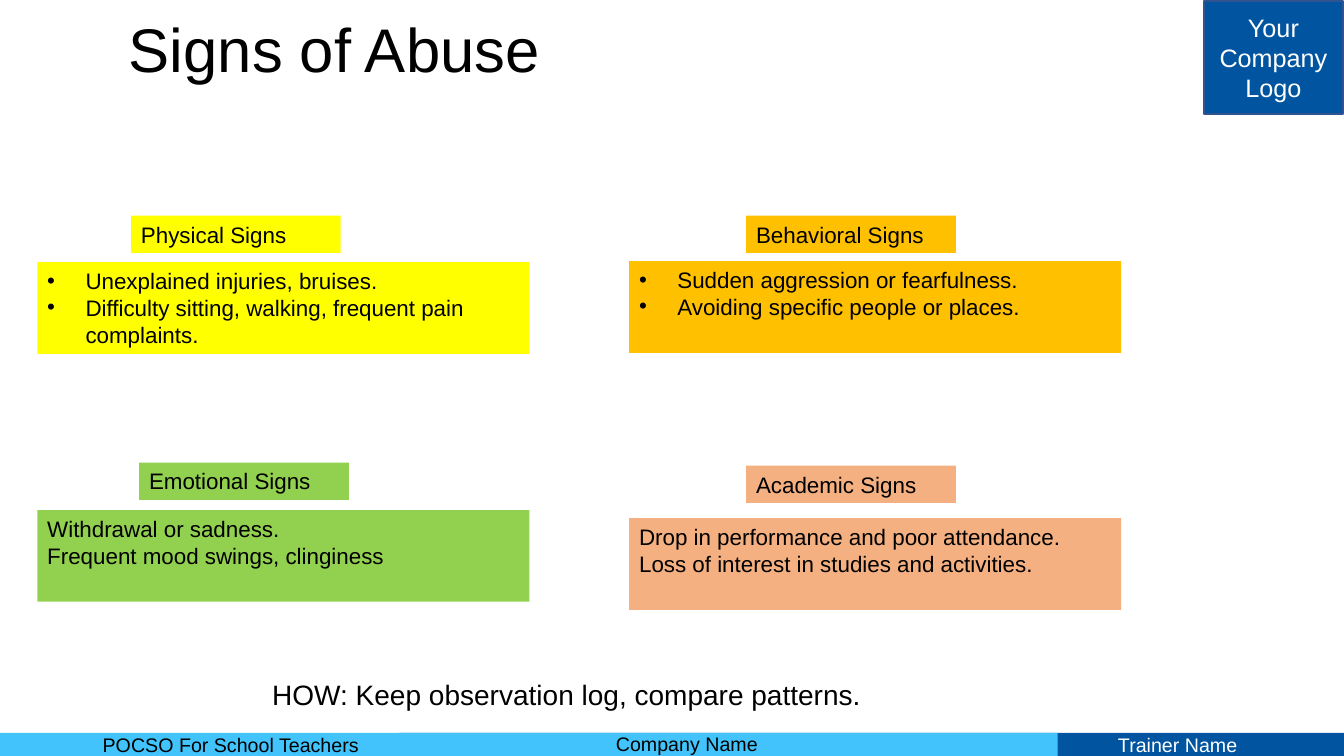
from lxml import etree
from pptx import Presentation
from pptx.dml.color import RGBColor
from pptx.enum.shapes import MSO_SHAPE
from pptx.enum.text import MSO_ANCHOR, PP_ALIGN
from pptx.oxml.ns import qn
from pptx.util import Inches, Pt

BLACK = RGBColor(0x00, 0x00, 0x00)
WHITE = RGBColor(0xFF, 0xFF, 0xFF)
NAVY = RGBColor(0x01, 0x54, 0x9F)
NAVY_EDGE = RGBColor(0x31, 0x53, 0x8F)
SKY = RGBColor(0x42, 0xC3, 0xFB)
YELLOW = RGBColor(0xFF, 0xFF, 0x00)
AMBER = RGBColor(0xFF, 0xC0, 0x00)
GREEN = RGBColor(0x92, 0xD0, 0x50)
PEACH = RGBColor(0xF4, 0xB0, 0x81)

FONT = "Arial"
BULLET_INDENT = Inches(0.38)

# heading, colour, heading position, body position, bulleted, signs
SIGN_GROUPS = [
    ("Physical Signs", YELLOW, (1.3, 2.14), (0.37, 2.6), True,
     ["Unexplained injuries, bruises.",
      "Difficulty sitting, walking, frequent pain complaints."]),
    ("Behavioral Signs", AMBER, (7.4, 2.14), (6.24, 2.59), True,
     ["Sudden aggression or fearfulness.",
      "Avoiding specific people or places."]),
    ("Emotional Signs", GREEN, (1.38, 4.59), (0.37, 5.06), False,
     ["Withdrawal or sadness.", "Frequent mood swings, clinginess"]),
    ("Academic Signs", PEACH, (7.4, 4.62), (6.24, 5.14), False,
     ["Drop in performance and poor attendance.",
      "Loss of interest in studies and activities."]),
]


def add_bullet(paragraph):
    properties = paragraph._p.get_or_add_pPr()
    properties.set("marL", str(BULLET_INDENT))
    properties.set("indent", str(-BULLET_INDENT))
    etree.SubElement(properties, qn("a:buFont"), typeface=FONT)
    etree.SubElement(properties, qn("a:buChar"), char="•")


def write_text(shape, lines, size=16, color=BLACK, align=PP_ALIGN.LEFT,
               anchor=MSO_ANCHOR.TOP, bulleted=False, line_spacing=None):
    frame = shape.text_frame
    frame.word_wrap = True
    frame.vertical_anchor = anchor
    for index, line in enumerate(lines):
        paragraph = frame.add_paragraph() if index else frame.paragraphs[0]
        if bulleted:
            add_bullet(paragraph)
        paragraph.alignment = align
        paragraph.line_spacing = line_spacing
        run = paragraph.add_run()
        run.text = line
        run.font.name = FONT
        run.font.size = Pt(size)
        run.font.color.rgb = color


def add_block(slide, left, top, width, height, fill, edge=None):
    block = slide.shapes.add_shape(
        MSO_SHAPE.RECTANGLE, Inches(left), Inches(top), Inches(width), Inches(height))
    block.shadow.inherit = False
    block.fill.solid()
    block.fill.fore_color.rgb = fill
    if edge is None:
        block.line.fill.background()
    else:
        block.line.color.rgb = edge
        block.line.width = Pt(1)
    return block


def add_label(slide, left, top, width, height, text, **text_format):
    label = slide.shapes.add_textbox(
        Inches(left), Inches(top), Inches(width), Inches(height))
    write_text(label, [text], **text_format)


def add_footer(slide):
    add_block(slide, 3.96, 7.27, 9.38, 0.23, NAVY)
    add_block(slide, 0, 7.27, 10.49, 0.24, SKY)
    add_label(slide, 0.92, 7.22, 3.86, 0.34, "POCSO For School Teachers", size=14)
    add_label(slide, 6.01, 7.21, 2.41, 0.34, "Company Name", size=14)
    add_label(slide, 10.99, 7.22, 2.34, 0.34, "Trainer Name", size=14, color=WHITE)


def add_logo_block(slide):
    logo_block = add_block(slide, 11.94, 0.01, 1.38, 1.12, NAVY, edge=NAVY_EDGE)
    write_text(logo_block, ["Your", "Company", "Logo"], size=18, color=WHITE,
               align=PP_ALIGN.CENTER, anchor=MSO_ANCHOR.MIDDLE)


def add_sign_group(slide, heading, color, heading_at, body_at, bulleted, signs):
    write_text(add_block(slide, *body_at, 4.88, 0.91, color), signs, bulleted=bulleted)
    write_text(add_block(slide, *heading_at, 2.08, 0.37, color), [heading])


def main():
    presentation = Presentation()
    presentation.slide_width = Inches(13.33)
    presentation.slide_height = Inches(7.5)
    slide = presentation.slides.add_slide(presentation.slide_layouts[6])

    add_footer(slide)
    add_logo_block(slide)
    add_label(slide, 1.18, 0.1, 7.07, 0.85, "Signs of Abuse", size=44,
              anchor=MSO_ANCHOR.MIDDLE, line_spacing=0.9)
    for group in SIGN_GROUPS:
        add_sign_group(slide, *group)
    add_label(slide, 2.6, 6.67, 6.09, 0.44,
              "HOW: Keep observation log, compare patterns.", size=20)

    presentation.save("out.pptx")


if __name__ == "__main__":
    main()
